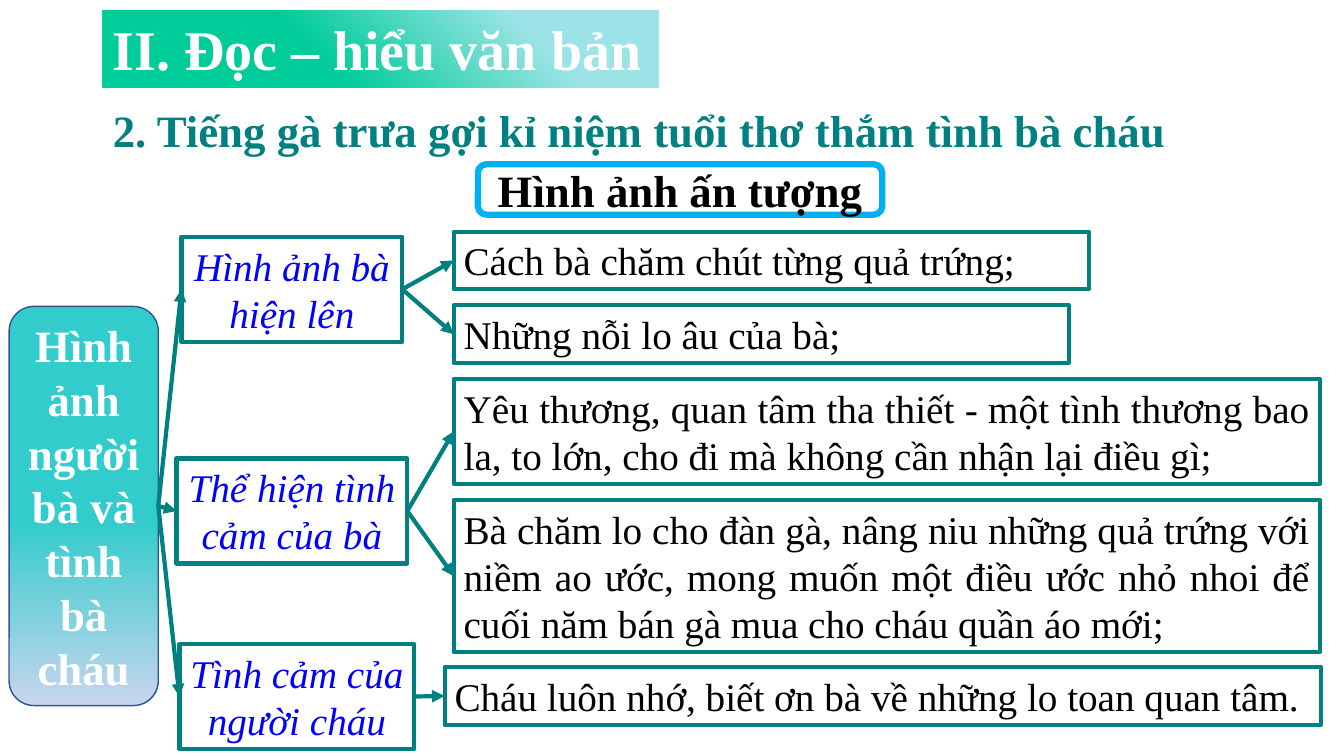
from pptx import Presentation
from pptx import util as u
from pptx.dml.color import RGBColor
from pptx.enum import shapes, text
from pptx.oxml.ns import qn
from lxml import etree

FONT = "Times New Roman"
TEAL, BLUE, SKY, WHITE, BLACK = "008080", "0000FF", "00B0F0", "FFFFFF", "000000"
RECT = shapes.MSO_SHAPE.RECTANGLE
ROUNDED = shapes.MSO_SHAPE.ROUNDED_RECTANGLE
TOP, MIDDLE = text.MSO_ANCHOR.TOP, text.MSO_ANCHOR.MIDDLE
LEFT, CENTER, JUSTIFY = text.PP_ALIGN.LEFT, text.PP_ALIGN.CENTER, text.PP_ALIGN.JUSTIFY
SITE_LEFT, SITE_RIGHT = 1, 3

HEADING = ("II. Đọc – hiểu văn bản", (1.02, 0.1, 5.52, 0.77))
SUBHEADING = ("2. Tiếng gà trưa gợi kỉ niệm tuổi thơ thắm tình bà cháu",
              (1.02, 0.89, 11.58, 0.72))
TOPIC = ("Hình ảnh ấn tượng", (4.74, 1.63, 4.01, 0.5))
ROOT = ("Hình ảnh người bà và tình bà cháu", (0.09, 3.04, 1.48, 3.96))
BRANCHES = [
    ("Hình ảnh bà hiện lên", (1.8, 2.35, 2.19, 1.04), [
        ("Cách bà chăm chút từng quả trứng;", (4.5, 2.3, 6.3, 0.57)),
        ("Những nỗi lo âu của bà;", (4.5, 3.03, 6.1, 0.57)),
    ]),
    ("Thể hiện tình cảm của bà", (1.75, 4.55, 2.29, 1.04), [
        ("Yêu thương, quan tâm tha thiết - một tình thương bao la, to lớn, "
         "cho đi mà không cần nhận lại điều gì;", (4.5, 3.76, 8.59, 1.04)),
        ("Bà chăm lo cho đàn gà, nâng niu những quả trứng với niềm ao ước, "
         "mong muốn một điều ước nhỏ nhoi để cuối năm bán gà mua cho cháu "
         "quần áo mới;", (4.5, 4.96, 8.59, 1.51)),
    ]),
    ("Tình cảm của người cháu", (1.78, 6.39, 2.33, 1.04), [
        ("Cháu luôn nhớ, biết ơn bà về những lo toan quan tâm.",
         (4.41, 6.62, 8.69, 0.57)),
    ]),
]


def rgb(value):
    return RGBColor.from_string(value)


def write(box, words, size, color, align, anchor=TOP, bold=False, italic=False):
    frame = box.text_frame
    frame.word_wrap = True
    frame.vertical_anchor = anchor
    if anchor == TOP:
        frame.auto_size = text.MSO_AUTO_SIZE.SHAPE_TO_FIT_TEXT
    para = frame.paragraphs[0]
    para.alignment = align
    span = para.add_run()
    span.text = words
    font = span.font
    font.name, font.size, font.bold, font.italic = FONT, u.Pt(size), bold, italic
    font.color.rgb = rgb(color)
    return para


def add_box(page, kind, place, line=None, width=3):
    box = page.shapes.add_shape(kind, *map(u.Inches, place))
    box.shadow.inherit = False
    box.fill.background()
    if line:
        box.line.color.rgb = rgb(line)
        box.line.width = u.Pt(width)
    else:
        box.line.fill.background()
    return box


def shade(box, stops, angle):
    """Two-stop gradient; the angle runs counterclockwise from the right."""
    box.fill.gradient()
    box.fill.gradient_angle = angle
    for stop, (position, color) in zip(box.fill.gradient_stops, stops):
        stop.position = position
        stop.color.rgb = rgb(color)


def add_arrow(page, source, target):
    arrow = page.shapes.add_connector(shapes.MSO_CONNECTOR.STRAIGHT, 0, 0, 0, 0)
    arrow.begin_connect(source, SITE_RIGHT)
    arrow.end_connect(target, SITE_LEFT)
    arrow.line.color.rgb = rgb(TEAL)
    arrow.line.width = u.Pt(3)
    etree.SubElement(arrow.line._get_or_add_ln(), qn("a:tailEnd"), type="triangle")
    etree.SubElement(arrow._element.spPr, qn("a:effectLst"))


def main():
    deck = Presentation()
    deck.slide_width, deck.slide_height = u.Inches(13.33), u.Inches(7.5)
    page = deck.slides.add_slide(deck.slide_layouts[6])

    words, place = HEADING
    heading = add_box(page, RECT, place)
    shade(heading, [(0.24, "9BE3E6"), (0.61, "00CC99")], 225)
    write(heading, words, 40, WHITE, LEFT, bold=True)

    words, place = SUBHEADING
    subheading = page.shapes.add_textbox(*map(u.Inches, place))
    para = write(subheading, words, 32, TEAL, LEFT, bold=True)
    para.line_spacing = 1.15
    para.space_after = u.Pt(10)

    words, place = TOPIC
    topic = add_box(page, ROUNDED, place, SKY, 4.5)
    write(topic, words, 32, BLACK, CENTER, MIDDLE, bold=True)

    words, place = ROOT
    root = add_box(page, ROUNDED, place, "325491", 1)
    shade(root, [(0.54, "33CCCC"), (1, "C7D5ED")], 270)
    write(root, words, 32, WHITE, CENTER, MIDDLE, bold=True)

    for words, place, leaves in BRANCHES:
        branch = add_box(page, RECT, place, TEAL)
        write(branch, words, 28, BLUE, CENTER, italic=True)
        add_arrow(page, root, branch)
        for leaf_words, leaf_place in leaves:
            leaf = add_box(page, RECT, leaf_place, TEAL)
            write(leaf, leaf_words, 28, BLACK, JUSTIFY)
            add_arrow(page, branch, leaf)

    deck.save("out.pptx")


if __name__ == "__main__":
    main()
